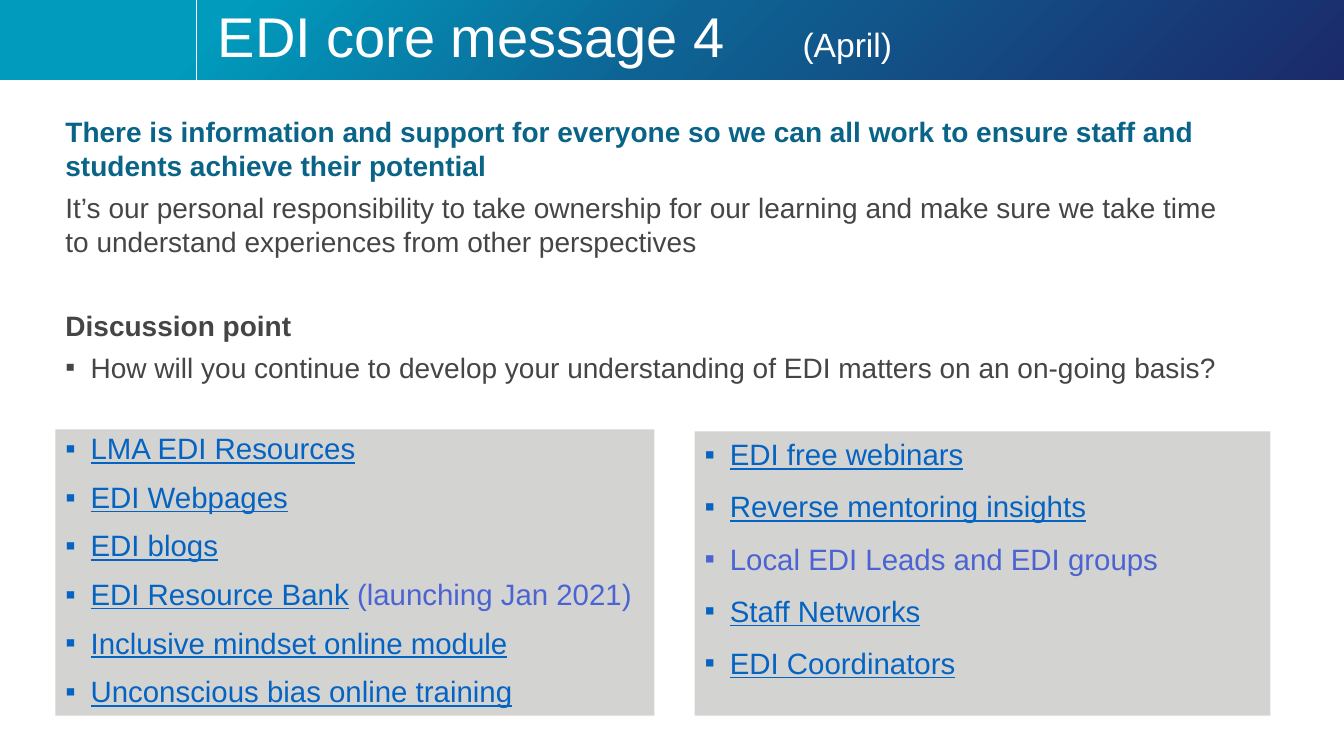
from lxml.etree import SubElement
from pptx import Presentation
from pptx.dml.color import RGBColor
from pptx.enum.shapes import MSO_CONNECTOR, MSO_SHAPE
from pptx.enum.text import MSO_ANCHOR, PP_ALIGN
from pptx.oxml.ns import qn
from pptx.util import Inches, Pt

WIDE, HIGH = Inches(13.33), Inches(7.5)
INK = {"white": "FFFFFF", "teal": "009BBD", "sea": "0E6394", "navy": "1B2A6B",
       "head": "0A6487", "text": "454545", "panel": "D3D3D2",
       "link": "0563C1", "plain": "4B64D2"}
BAR = 10.53
EDGE = 4.13
LEFT = [[("LMA EDI Resources", "link")],
        [("EDI Webpages", "link")],
        [("EDI blogs", "link")],
        [("EDI Resource Bank", "link"), (" (launching Jan 2021)", "plain")],
        [("Inclusive mindset online module", "link")],
        [("Unconscious bias online training", "link")]]
RIGHT = [[("EDI free webinars", "link")],
         [("Reverse mentoring insights", "link")],
         [("Local EDI Leads and EDI groups", "plain")],
         [("Staff Networks", "link")],
         [("EDI Coordinators", "link")]]
BODY = [("There is information and support for everyone so we can all work to "
         "ensure staff and students achieve their potential", "head", True, 0, False),
        ("It’s our personal responsibility to take ownership for our learning and "
         "make sure we take time to understand experiences from other perspectives",
         "text", False, 6, False),
        ("Discussion point", "text", True, 36, False),
        ("How will you continue to develop your understanding of EDI matters on an "
         "on-going basis?", "text", False, 6, True)]


def place(x, y, wide, high):
    """Turn percentages of the slide into lengths."""
    return [int(side * part / 100) for side, part in
            zip((WIDE, HIGH, WIDE, HIGH), (x, y, wide, high))]


def style(run, size, ink, bold=False, line=False):
    """Format one run."""
    font = run.font
    font.name, font.size, font.bold, font.underline = "Arial", Pt(size), bold, line
    font.color.rgb = RGBColor.from_string(INK[ink])


def bullet(para):
    """Give a paragraph a square bullet with a hanging indent."""
    props = para._p.get_or_add_pPr()
    props.set("marL", str(Inches(0.25)))
    props.set("indent", str(-Inches(0.25)))
    SubElement(props, qn("a:buFont"), typeface="Arial")
    SubElement(props, qn("a:buChar"), char="▪")


def blend(shape, stops, angle):
    """Fill a shape with a linear gradient."""
    shape.fill.gradient()
    fill = shape._element.spPr.find(qn("a:gradFill"))
    for part in list(fill):
        fill.remove(part)
    row = SubElement(fill, qn("a:gsLst"))
    for share, ink in stops:
        stop = SubElement(row, qn("a:gs"), pos=str(share * 1000))
        SubElement(stop, qn("a:srgbClr"), val=INK[ink])
    SubElement(fill, qn("a:lin"), ang=str(angle * 60000), scaled="0")


def block(slide, *spot):
    """Add a borderless rectangle."""
    shape = slide.shapes.add_shape(MSO_SHAPE.RECTANGLE, *place(*spot))
    shape.shadow.inherit = False
    shape.line.fill.background()
    return shape


def banner(slide):
    """Draw the gradient bar, its rule and the title."""
    blend(block(slide, 0, 0, 100, BAR), [(17, "teal"), (50, "sea"), (100, "navy")], 45)
    x, top, _, end = place(14.63, 0, 0, BAR)
    rule = slide.shapes.add_connector(MSO_CONNECTOR.STRAIGHT, x, top, x, end)
    rule.line.color.rgb = RGBColor.from_string(INK["white"])
    rule.line.width = Pt(0.5)
    SubElement(rule._element.spPr, qn("a:effectLst"))
    title = slide.shapes.title
    slide.shapes._spTree.append(title._element)
    title.left, title.top, title.width, title.height = place(15.45, 0, 72.4, BAR)
    frame = title.text_frame
    frame.vertical_anchor = MSO_ANCHOR.MIDDLE
    frame.text = "EDI core message 4\t"
    para = frame.paragraphs[0]
    para.alignment, para.line_spacing = PP_ALIGN.LEFT, 0.9
    tabs = SubElement(para._p.get_or_add_pPr(), qn("a:tabLst"))
    SubElement(tabs, qn("a:tab"), pos=str(Inches(5.8)), algn="l")
    para.add_run().text = "(April)"
    for run, size in zip(para.runs, (40, 24)):
        style(run, size, "white")


def message(slide):
    """Write the main text."""
    frame = slide.shapes.add_textbox(*place(EDGE, 14.53, 88.4, 73.73)).text_frame
    frame.word_wrap = True
    for spot, (text, ink, bold, gap, dot) in enumerate(BODY):
        para = frame.add_paragraph() if spot else frame.paragraphs[0]
        para.text = text
        para.space_before = Pt(gap)
        if dot:
            bullet(para)
        style(para.runs[0], 20, ink, bold)


def panel(slide, spot, items, pitch):
    """Add a grey panel with a list of resources."""
    shape = block(slide, *spot)
    shape.fill.solid()
    shape.fill.fore_color.rgb = RGBColor.from_string(INK["panel"])
    frame = shape.text_frame
    frame.word_wrap, frame.vertical_anchor = True, MSO_ANCHOR.TOP
    for order, parts in enumerate(items):
        para = frame.add_paragraph() if order else frame.paragraphs[0]
        para.alignment, para.line_spacing = PP_ALIGN.LEFT, pitch
        para.space_before, para.space_after = Pt(6 if order else 0), Pt(6)
        bullet(para)
        for text, ink in parts:
            run = para.add_run()
            run.text = text
            style(run, 21, ink, line=ink == "link")


def main():
    """Build and save the slide."""
    deck = Presentation()
    deck.slide_width, deck.slide_height = WIDE, HIGH
    slide = deck.slides.add_slide(deck.slide_layouts[5])
    banner(slide)
    message(slide)
    panel(slide, (EDGE, 56.8, 44.56, 37.87), LEFT, 0.9)
    panel(slide, (51.69, 57.07, 42.84, 37.6), RIGHT, 1)
    deck.save("out.pptx")


if __name__ == "__main__":
    main()
